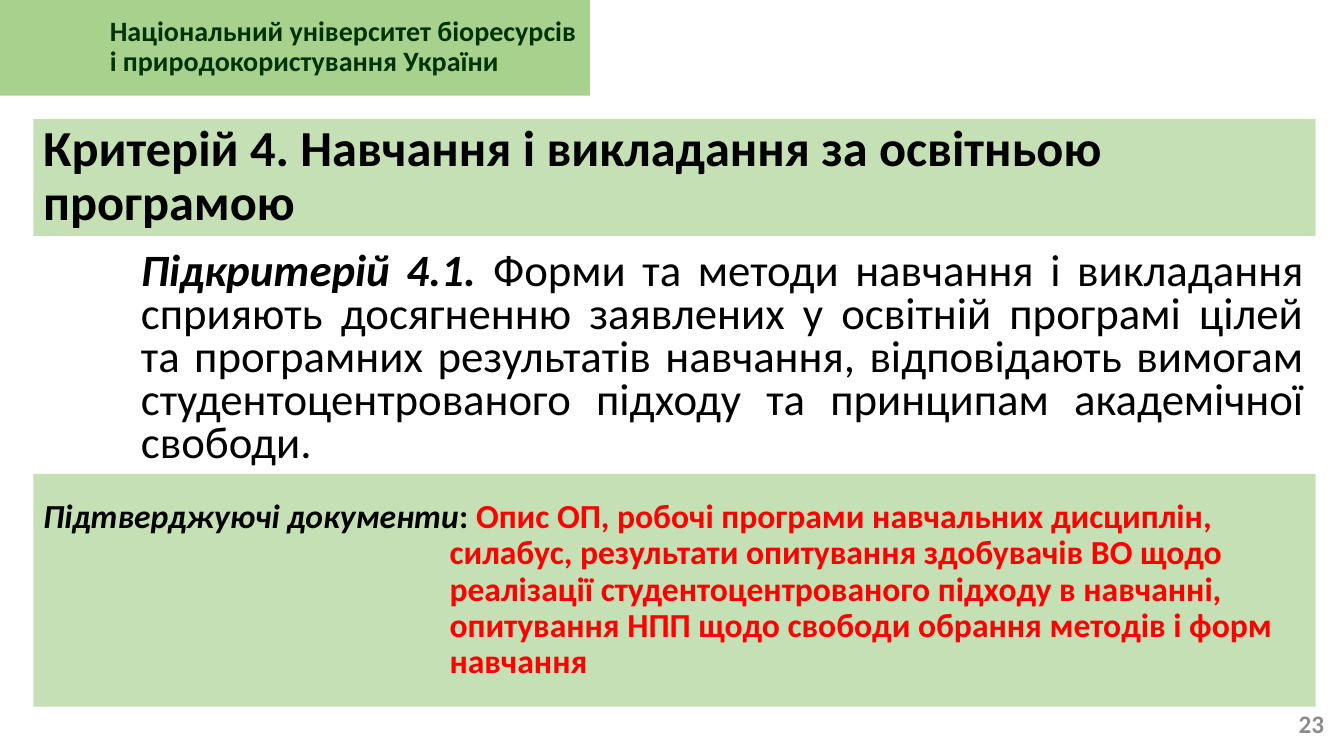
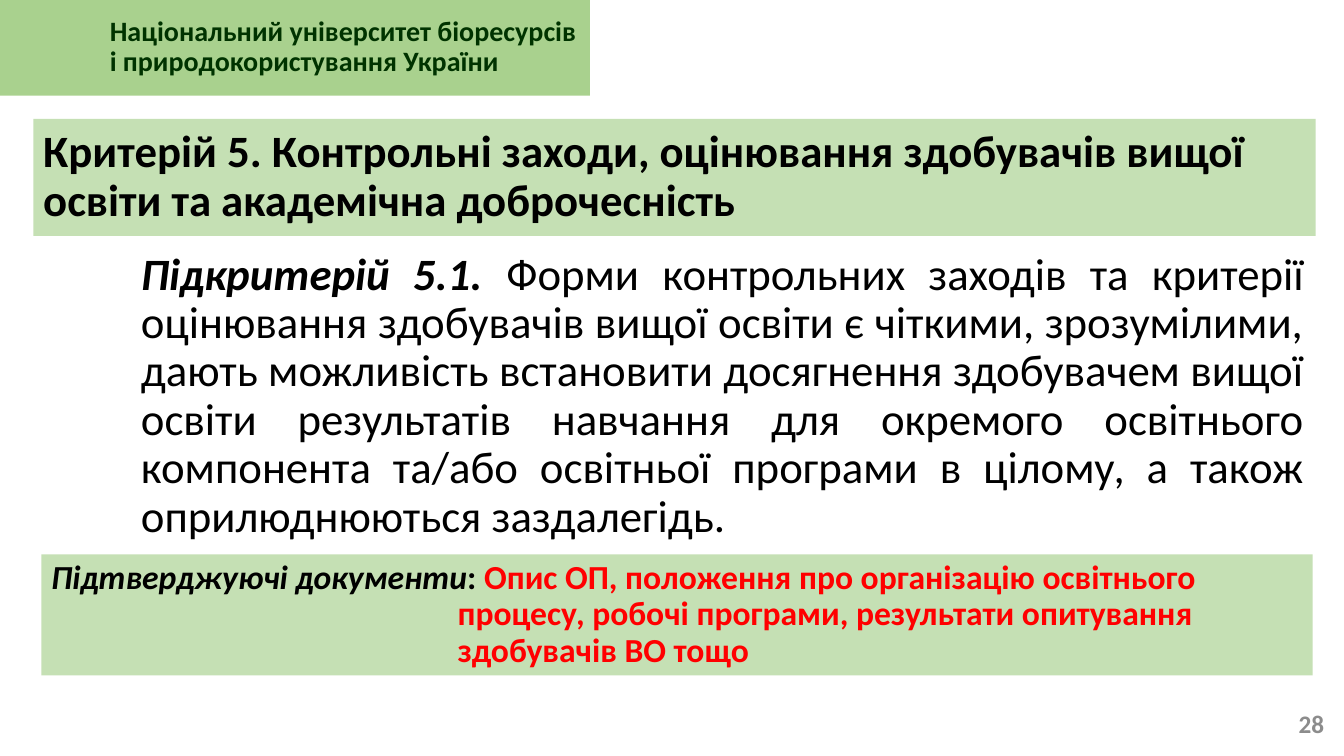
"""Build two slides on accreditation criteria for a study programme."""
import pptx
import pptx.dml.color
import pptx.enum.shapes
import pptx.enum.text
import pptx.util

RGB = pptx.dml.color.RGBColor
ALIGN = pptx.enum.text.PP_ALIGN

HEADER_GREEN = RGB(0xA9, 0xD1, 0x8E)
PANEL_GREEN = RGB(0xC5, 0xE0, 0xB4)
DARK_GREEN = RGB(0x00, 0x33, 0x00)
BLACK = RGB(0x00, 0x00, 0x00)
RED = RGB(0xFF, 0x00, 0x00)
GREY = RGB(0x8C, 0x8C, 0x8C)

FONT = "Calibri"
EMU_PER_PX = 9144
PAGE_SIZE = (1333, 750)
HEADER_AREA = (0, -1, 585, 96)
TITLE_AREA = (33, 118, 1272, 116)
NUMBER_AREA = (1274, 698, 49, 40)
HEADER_INDENT = 99
DOCUMENTS_INDENT = 403

UNIVERSITY = "Національний університет біоресурсів і природокористування України"
DOCUMENTS_LABEL = "Підтверджуючі документи"


def px(length):
    """Turn a length in px into EMU."""
    return pptx.util.Emu(length * EMU_PER_PX)


def add_panel(page, area, fill):
    """Add a filled rectangle without outline or shadow."""
    panel = page.shapes.add_shape(
        pptx.enum.shapes.MSO_SHAPE.RECTANGLE, *map(px, area))
    panel.shadow.inherit = False
    panel.fill.solid()
    panel.fill.fore_color.rgb = fill
    panel.line.fill.background()
    return panel


def add_text_box(page, area):
    """Add an empty text box."""
    return page.shapes.add_textbox(*map(px, area))


def style_paragraph(box, size, color=BLACK, bold=True, align=ALIGN.LEFT,
                    spacing=0.9, indent=0, first_line=0):
    """Format the only paragraph of a box and return it."""
    frame = box.text_frame
    frame.word_wrap = True
    frame.vertical_anchor = pptx.enum.text.MSO_ANCHOR.MIDDLE
    para = frame.paragraphs[0]
    para.alignment = align
    para.line_spacing = spacing
    properties = para._p.get_or_add_pPr()
    properties.set("marL", str(px(indent)))
    properties.set("indent", str(px(first_line)))
    para.font.name = FONT
    para.font.size = pptx.util.Pt(size)
    para.font.bold = bold
    para.font.color.rgb = color
    return para


def add_span(para, text, bold=None, italic=None, color=None):
    """Add a run that differs from its paragraph only where stated."""
    span = para.add_run()
    span.text = text
    span.font.bold = bold
    span.font.italic = italic
    if color is not None:
        span.font.color.rgb = color


def add_header(page):
    """Add the band with the name of the university."""
    band = add_panel(page, HEADER_AREA, HEADER_GREEN)
    para = style_paragraph(band, 20, DARK_GREEN, indent=HEADER_INDENT)
    add_span(para, UNIVERSITY)


def add_title(page, text, size):
    """Add the title on its green panel."""
    panel = add_panel(page, TITLE_AREA, PANEL_GREEN)
    add_span(style_paragraph(panel, size), text)


def add_subcriterion(page, number, text, height, spacing):
    """Add the justified wording of a subcriterion."""
    box = add_text_box(page, (130, 236, 1174, height))
    para = style_paragraph(box, 32, bold=False, align=ALIGN.JUSTIFY, spacing=spacing)
    add_span(para, f"Підкритерій {number}. ", bold=True, italic=True)
    add_span(para, text)


def add_page_number(page, number):
    """Add the page number in the lower right corner."""
    box = add_text_box(page, NUMBER_AREA)
    para = style_paragraph(box, 18, GREY, align=ALIGN.RIGHT, spacing=1.0)
    add_span(para, str(number))


def add_documents(page, area, text):
    """Add the panel of supporting documents with a hanging indent."""
    panel = add_panel(page, area, PANEL_GREEN)
    para = style_paragraph(panel, 24, indent=DOCUMENTS_INDENT,
                           first_line=-DOCUMENTS_INDENT)
    add_span(para, DOCUMENTS_LABEL, italic=True)
    add_span(para, ": ")
    add_span(para, text, color=RED)


def add_page(deck):
    """Add a blank page with the shared header."""
    page = deck.slides.add_slide(deck.slide_layouts[6])
    add_header(page)
    return page


def main():
    """Build and save the deck."""
    deck = pptx.Presentation()
    deck.slide_width, deck.slide_height = map(px, PAGE_SIZE)

    page = add_page(deck)
    add_title(page, "Критерій 4. Навчання і викладання за освітньою програмою", 36)
    add_subcriterion(
        page, "4.1",
        "Форми та методи навчання і викладання сприяють досягненню заявлених "
        "у освітній програмі цілей та програмних результатів навчання, "
        "відповідають вимогам студентоцентрованого підходу та принципам "
        "академічної свободи.",
        height=241, spacing=0.8)
    add_page_number(page, 23)
    add_documents(
        page, (33, 470, 1272, 231),
        "Опис ОП, робочі програми навчальних дисциплін, силабус, результати "
        "опитування здобувачів ВО щодо реалізації студентоцентрованого підходу "
        "в навчанні, опитування НПП щодо свободи обрання методів і форм навчання")

    page = add_page(deck)
    add_title(page, "Критерій 5. Контрольні заходи, оцінювання здобувачів вищої "
                    "освіти та академічна доброчесність", 32)
    add_subcriterion(
        page, "5.1",
        "Форми контрольних заходів та критерії оцінювання здобувачів вищої "
        "освіти є чіткими, зрозумілими, дають можливість встановити досягнення "
        "здобувачем вищої освіти результатів навчання для окремого освітнього "
        "компонента та/або освітньої програми в цілому, а також "
        "оприлюднюються заздалегідь.",
        height=315, spacing=0.9)
    add_page_number(page, 28)
    add_documents(
        page, (41, 550, 1261, 120),
        "Опис ОП, положення про організацію освітнього процесу, робочі "
        "програми, результати опитування здобувачів ВО тощо")

    deck.save("out.pptx")


if __name__ == "__main__":
    main()
